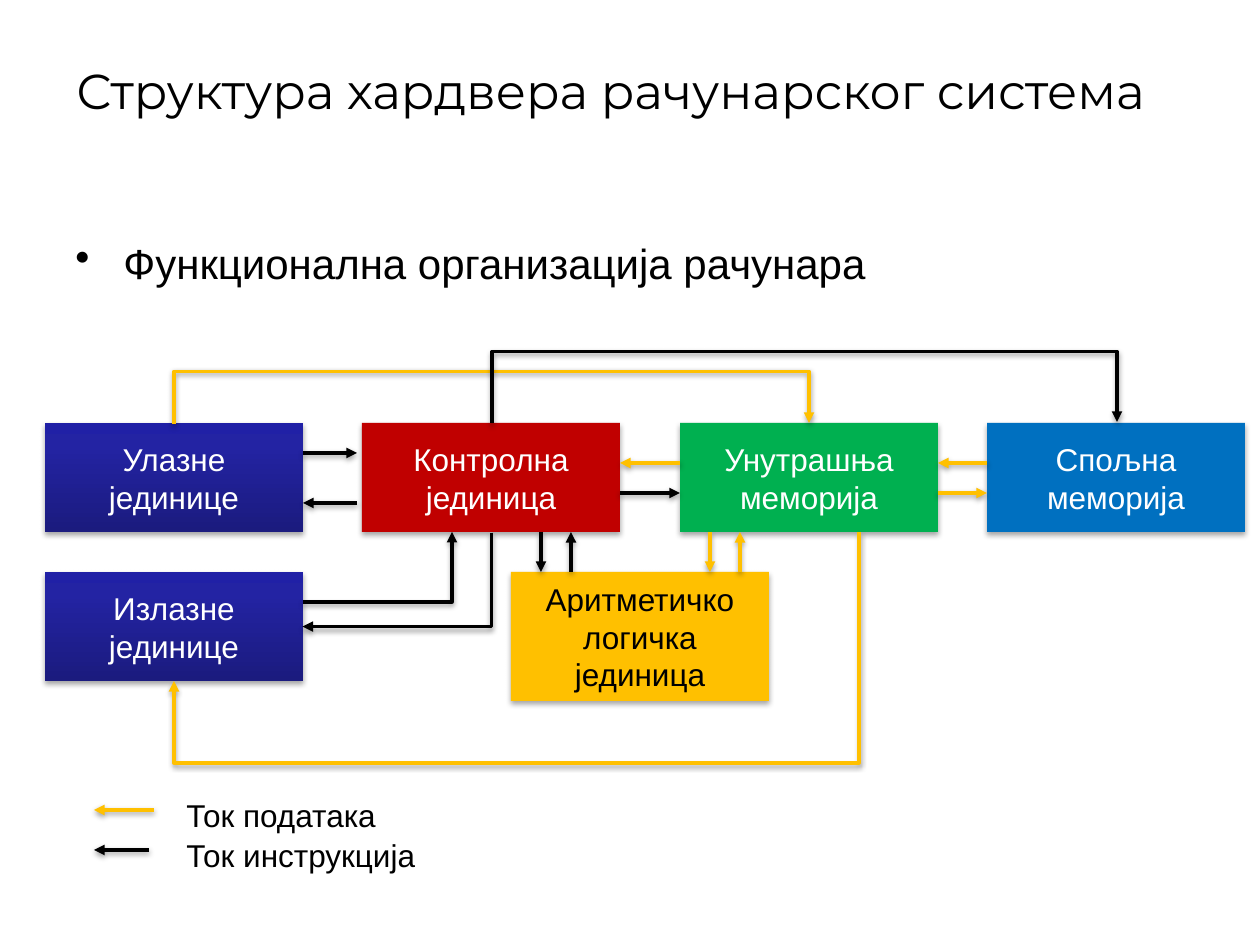
from copy import deepcopy

from pptx import Presentation
from pptx.dml.color import RGBColor
from pptx.enum.shapes import MSO_CONNECTOR, MSO_SHAPE
from pptx.enum.text import MSO_ANCHOR, PP_ALIGN
from pptx.oxml.ns import qn
from pptx.oxml.xmlchemy import OxmlElement
from pptx.util import Pt

RECT = MSO_SHAPE.RECTANGLE
STRAIGHT, ELBOW = MSO_CONNECTOR.STRAIGHT, MSO_CONNECTOR.ELBOW
MIDDLE, TOP = MSO_ANCHOR.MIDDLE, MSO_ANCHOR.TOP
CENTER = PP_ALIGN.CENTER
EMU_PER_PX = 914400 / 126
BOX_W, BOX_H = 258, 109
ROW_1, ROW_2 = 423, 572
COLORS = {
    "black": "000000", "white": "FFFFFF", "red": "C00000", "green": "00B050",
    "amber": "FFC000", "blue": "0070C0",
}
NAVY_STOPS = [(0, "1B1B7E"), (0.8, "2323A3"), (1, "2020A6")]


def px(n):
    return round(n * EMU_PER_PX)


def rgb(name):
    return RGBColor.from_string(COLORS[name])


def add_child(parent, tag, **attrs):
    child = OxmlElement(tag)
    for key, value in attrs.items():
        child.set(key, str(value))
    parent.append(child)
    return child


def set_shadow(shape, dist, alpha):
    effects = add_child(shape._element.spPr, "a:effectLst")
    shadow = add_child(effects, "a:outerShdw", blurRad=40000, dist=dist,
                       dir=5400000, rotWithShape=0)
    color = add_child(shadow, "a:srgbClr", val=COLORS["black"])
    add_child(color, "a:alpha", val=alpha * 1000)


def style_text(p, size, color="black", font="Arial"):
    p.font.size = Pt(size)
    p.font.name = font
    p.font.color.rgb = rgb(color)


def add_text(s, text, box, size, font="Arial", anchor=TOP, wrap=True):
    tf = s.shapes.add_textbox(*map(px, box)).text_frame
    tf.word_wrap = wrap
    tf.vertical_anchor = anchor
    tf.text = text
    p = tf.paragraphs[0]
    style_text(p, size, font=font)
    return p


def add_bullet(p, indent):
    pPr = p._p.get_or_add_pPr()
    pPr.set("marL", str(px(indent)))
    pPr.set("indent", str(-px(indent)))
    bullet = OxmlElement("a:buChar")
    bullet.set("char", "•")
    pPr.insert(0, bullet)


def fill_navy(shape):
    fill = shape.fill
    fill.gradient()
    fill.gradient_angle = 90
    stops = shape._element.spPr.find(".//" + qn("a:gsLst"))
    stops.append(deepcopy(stops[-1]))
    for stop, (position, color) in zip(fill.gradient_stops, NAVY_STOPS):
        stop.position = position
        stop.color.rgb = RGBColor.from_string(color)


def add_unit(s, text, left, top, fill, color="white", height=BOX_H):
    shape = s.shapes.add_shape(RECT, *map(px, (left, top, BOX_W, height)))
    if fill == "navy":
        fill_navy(shape)
    else:
        shape.fill.solid()
        shape.fill.fore_color.rgb = rgb(fill)
    shape.line.fill.background()
    set_shadow(shape, 23000, 35)
    tf = shape.text_frame
    tf.word_wrap = True
    tf.vertical_anchor = MIDDLE
    tf.text = text
    tf.paragraphs[0].alignment = CENTER
    style_text(tf.paragraphs[0], 18, color)


def style_flow(line, color):
    line.line.color.rgb = rgb(color)
    line.line.width = Pt(2)
    add_child(line.line._get_or_add_ln(), "a:tailEnd", type="triangle")
    set_shadow(line, 20000, 38)


def add_arrow(s, color, x1, y1, x2, y2):
    line = s.shapes.add_connector(STRAIGHT, *map(px, (x1, y1, x2, y2)))
    style_flow(line, color)


def add_bent_arrow(s, color, preset, box, turn=0, flips="", adjust=()):
    left, top, width, height = box
    line = s.shapes.add_connector(
        ELBOW, *map(px, (left, top, left + width, top + height)))
    spPr = line._element.spPr
    spPr.xfrm.set("rot", str(turn * 60000))
    for axis in flips:
        spPr.xfrm.set("flip" + axis, "1")
    geometry = spPr.find(qn("a:prstGeom"))
    geometry.set("prst", preset)
    guides = geometry.find(qn("a:avLst"))
    for i, value in enumerate(adjust, 1):
        add_child(guides, "a:gd", name=f"adj{i}",
                  fmla=f"val {round(value * 100000)}")
    style_flow(line, color)


def main():
    """Build the slide on the structure of computer hardware."""
    prs = Presentation()
    prs.slide_width, prs.slide_height = px(1260), px(945)
    s = prs.slides.add_slide(prs.slide_layouts[6])

    add_text(s, "Структура хардвера рачунарског система",
             (64, 27, 1150, 126), 28, "Montserrat", MIDDLE)
    p = add_text(s, "Функционална организација рачунара",
                 (63, 231, 1013, 73), 24)
    add_bullet(p, 48)

    add_unit(s, "Улазне јединице", 45, ROW_1, "navy")
    add_unit(s, "Излазне јединице", 45, ROW_2, "navy")
    add_unit(s, "Контролна јединица", 362, ROW_1, "red")
    add_unit(s, "Унутрашња меморија", 680, ROW_1, "green")
    add_unit(s, "Аритметичко логичка јединица", 511, ROW_2, "amber", "black", 129)
    add_unit(s, "Спољна меморија", 987, ROW_1, "blue")

    add_bent_arrow(s, "amber", "bentConnector3", (491, 106, 1, 635), 90, "HV", [53])
    add_bent_arrow(s, "amber", "bentConnector4", (174, 532, 685, 149), 180, "V",
                   [0, 1.55])
    add_bent_arrow(s, "black", "bentConnector3", (303, 532, 149, 70), 0, "V", [1])
    add_bent_arrow(s, "black", "bentConnector2", (350, 485, 94, 189), 90)
    add_bent_arrow(s, "black", "bentConnector3", (804, 110, 1, 625), 90, "HV", [72])

    for color, *ends in [
        ("black", 303, 453, 357, 453), ("black", 357, 503, 303, 503),
        ("amber", 680, 463, 620, 463), ("black", 620, 493, 680, 493),
        ("amber", 987, 463, 938, 463), ("amber", 938, 493, 987, 493),
        ("black", 541, 532, 541, 572), ("black", 571, 572, 571, 532),
        ("amber", 710, 532, 710, 572), ("amber", 740, 572, 740, 532),
        ("amber", 154, 810, 94, 810), ("black", 149, 850, 94, 850),
    ]:
        add_arrow(s, color, *ends)

    add_text(s, "Ток података", (174, 790, 217, 50), 18, wrap=False)
    add_text(s, "Ток инструкција", (174, 830, 256, 50), 18, wrap=False)
    prs.save("out.pptx")


if __name__ == "__main__":
    main()
